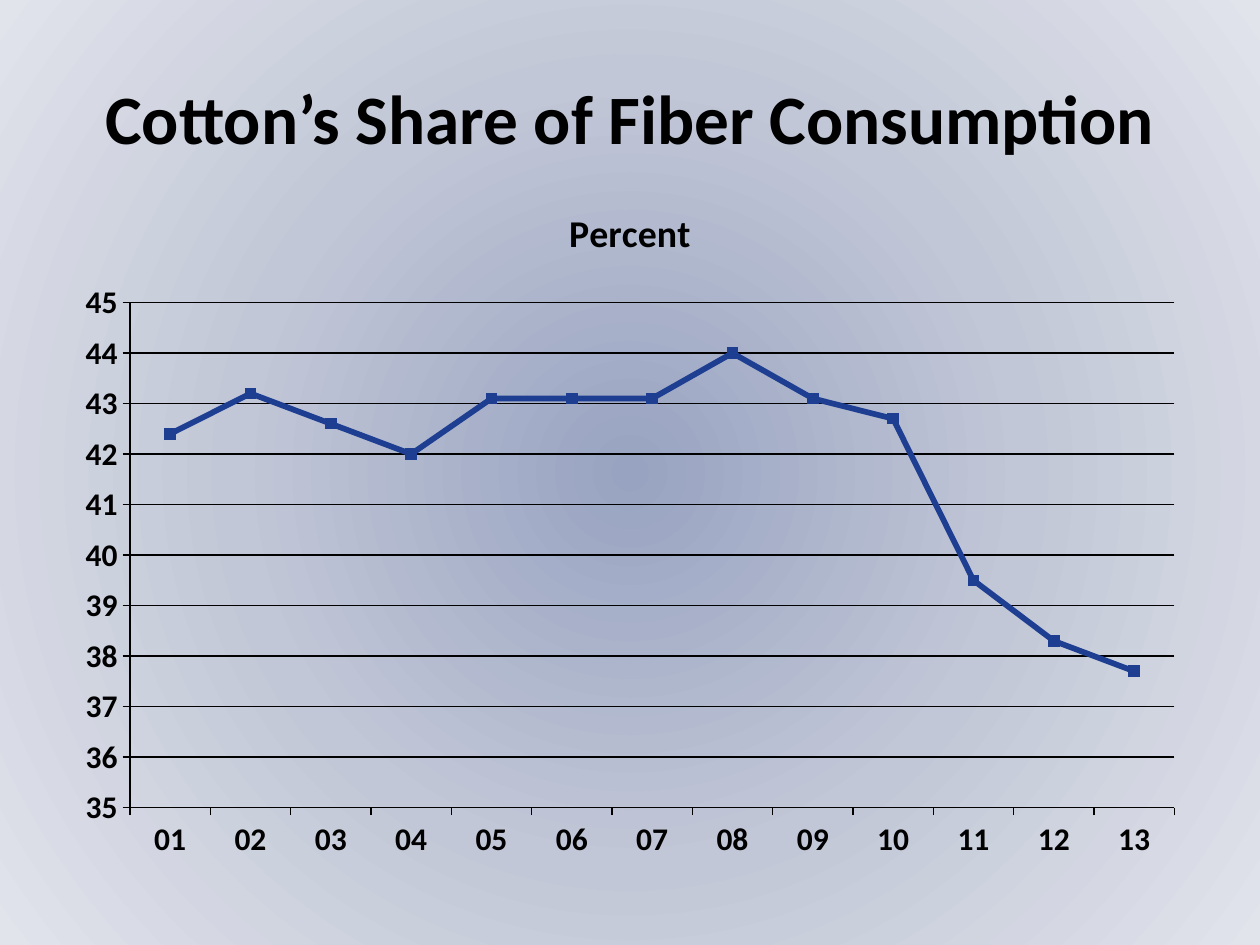
from dataclasses import dataclass

from lxml import etree
from pptx import Presentation
from pptx import util as u
from pptx.chart.data import CategoryChartData
from pptx.dml.color import RGBColor
from pptx.enum import chart as charts, text
from pptx.oxml.ns import qn

COLORS = {"ink": "000000", "line": "1E3E92",
          "center": "98A3C1", "middle": "C2C7D7", "edge": "E1E4EB"}
SHARES = [42.4, 43.2, 42.6, 42, 43.1, 43.1, 43.1, 44, 43.1, 42.7, 39.5, 38.3, 37.7]


def color(name):
    return RGBColor.from_string(COLORS[name])


@dataclass
class SlideBuilder:
    """Holds the text style and the slide being built."""
    slide: object
    font_name: str = "Calibri"

    def style_font(self, font, size):
        font.name, font.size, font.bold = self.font_name, u.Pt(size), True
        font.color.rgb = color("ink")

    def style_line(self, line, name, width):
        line.color.rgb = color(name)
        line.width = u.Pt(width)

    def radial_background(self, names):
        self.slide.background.fill.gradient()
        gradient = self.slide.element.find(".//" + qn("a:gradFill"))
        for child in list(gradient):
            gradient.remove(child)
        stops = etree.SubElement(gradient, qn("a:gsLst"))
        for index, name in enumerate(names):
            position = 100000 * index // (len(names) - 1)
            stop = etree.SubElement(stops, qn("a:gs"), pos=str(position))
            etree.SubElement(stop, qn("a:srgbClr"), val=COLORS[name])
        circle = etree.SubElement(gradient, qn("a:path"), {"path": "circle"})
        etree.SubElement(circle, qn("a:fillToRect"), dict.fromkeys("ltrb", "50000"))

    def title(self, words, left, top, width, height, size):
        box = self.slide.shapes.add_textbox(u.Cm(left), u.Cm(top), u.Cm(width), u.Cm(height))
        frame = box.text_frame
        frame.word_wrap = True
        frame.vertical_anchor = text.MSO_ANCHOR.MIDDLE
        paragraph = frame.paragraphs[0]
        paragraph.text = words
        paragraph.alignment = text.PP_ALIGN.CENTER
        self.style_font(paragraph.font, size)

    def line_chart(self, heading, categories, values, left, top, width, height):
        data = CategoryChartData()
        data.categories = categories
        data.add_series("Series 1", values)
        chart = self.slide.shapes.add_chart(
            charts.XL_CHART_TYPE.LINE_MARKERS,
            u.Cm(left), u.Cm(top), u.Cm(width), u.Cm(height), data).chart
        self.style_font(chart.font, 18)
        chart.has_legend = False
        chart.has_title = True
        paragraph = chart.chart_title.text_frame.paragraphs[0]
        paragraph.text = heading
        self.style_font(paragraph.font, 21.6)
        chart.chart_title.include_in_layout = False

        for axis in (chart.category_axis, chart.value_axis):
            axis.major_tick_mark = charts.XL_TICK_MARK.OUTSIDE
            self.style_line(axis.format.line, "ink", 0.75)
        axis = chart.value_axis
        axis.minimum_scale, axis.maximum_scale, axis.major_unit = 35, 45, 1
        axis.tick_labels.number_format = "#,##0"
        axis.tick_labels.number_format_is_linked = False
        axis.has_major_gridlines = True
        self.style_line(axis.major_gridlines.format.line, "ink", 0.75)

        plot = chart.plots[0]
        plot.vary_by_categories = False
        series = plot.series[0]
        series.smooth = False
        self.style_line(series.format.line, "line", 3.25)
        series.marker.style = charts.XL_MARKER_STYLE.SQUARE
        series.marker.size = 6
        series.marker.format.fill.solid()
        series.marker.format.fill.fore_color.rgb = color("line")
        self.style_line(series.marker.format.line, "line", 0.75)


def main():
    presentation = Presentation()
    presentation.slide_width, presentation.slide_height = u.Cm(25.4), u.Cm(19.05)
    slide = presentation.slides.add_slide(presentation.slide_layouts[6])
    builder = SlideBuilder(slide)
    builder.radial_background(["center", "middle", "edge"])
    builder.title("Cotton’s Share of Fiber Consumption", 1.27, 0.76, 22.86, 3.18, 39.6)
    years = [f"{year:02d}" for year in range(1, 14)]
    builder.line_chart("Percent", years, SHARES, 1.27, 3.61, 22.86, 13.97)
    presentation.save("out.pptx")


if __name__ == "__main__":
    main()
